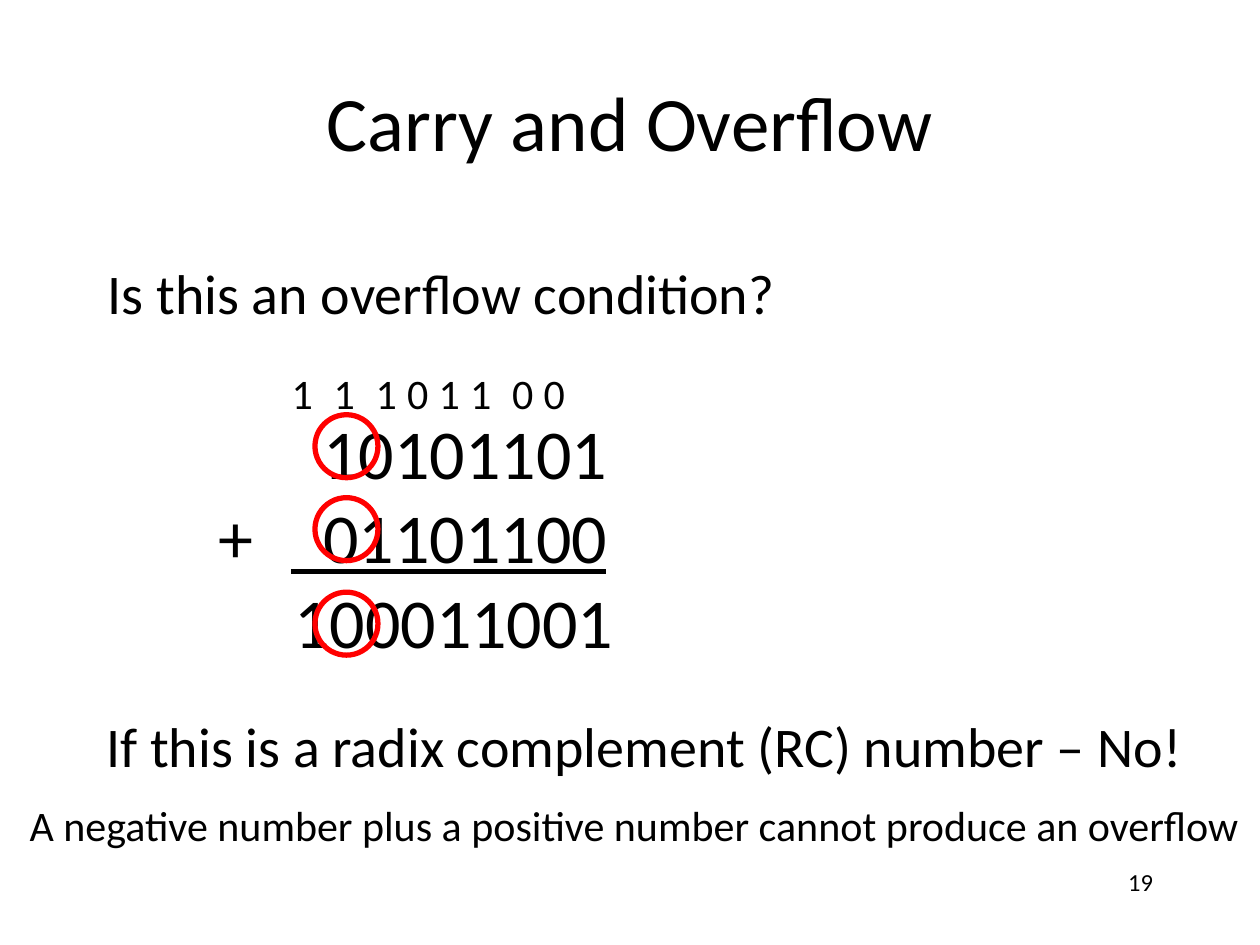
from pptx import Presentation
from pptx.dml.color import RGBColor
from pptx.enum.shapes import MSO_CONNECTOR, MSO_SHAPE
from pptx.enum.text import MSO_ANCHOR, PP_ALIGN
from pptx.oxml.ns import qn
from pptx.util import Inches, Pt
from lxml.etree import SubElement

BLACK = RGBColor(0, 0, 0)
RED = RGBColor(255, 0, 0)
FONT = "Calibri"
COLS, ROWS = 120, 90
LEFT, MID, RIGHT = PP_ALIGN.LEFT, PP_ALIGN.CENTER, PP_ALIGN.RIGHT


def cells(*counts):
    """Turn counts of grid cells, twelve to the inch, into lengths."""
    return [Inches(count / 12) for count in counts]


def add_text(slide, area, lines, size, align=LEFT, wrap=False,
             anchor=MSO_ANCHOR.TOP):
    """Add a text box with one paragraph for each line."""
    frame = slide.shapes.add_textbox(*cells(*area)).text_frame
    frame.word_wrap = wrap
    frame.vertical_anchor = anchor
    for row, line in enumerate(lines):
        para = frame.add_paragraph() if row else frame.paragraphs[0]
        para.alignment = align
        run = para.add_run()
        run.text = line
        run.font.name = FONT
        run.font.size = Pt(size)
        run.font.color.rgb = BLACK


def add_ring(slide, left, top, size):
    """Add a red ring around a sign bit."""
    ring = slide.shapes.add_shape(MSO_SHAPE.OVAL, *cells(left, top, size, size))
    ring.shadow.inherit = False
    ring.fill.background()
    ring.line.color.rgb = RED
    ring.line.width = Pt(3)


def add_rule(slide, left, right, top):
    """Add the black rule above the result of the sum."""
    rule = slide.shapes.add_connector(
        MSO_CONNECTOR.STRAIGHT, *cells(left, top, right, top))
    rule.line.color.rgb = BLACK
    rule.line.width = Pt(3)
    SubElement(rule._element.spPr, qn("a:effectLst"))


def add_sum(slide):
    """Add the binary sum with its carries and ringed sign bits."""
    add_text(slide, (26.6, 38.4, 32.4, 22.6), ["10101101", "01101100"], 40,
             RIGHT, wrap=True)
    add_text(slide, (19.6, 46.4, 5.8, 9.2), ["+"], 40)
    for bit, col in zip("11101100", (0, 4, 8, 11, 14, 17, 21, 24)):
        add_text(slide, (26.6 + col, 34.4, 4.4, 6.1), [bit], 24)
    add_rule(slide, 27.7, 57.7, 54.4)
    add_text(slide, (20.6, 54.5, 39, 9.2), ["100011001"], 40, RIGHT, wrap=True)
    for top in (39.5, 47.4, 56.4):
        add_ring(slide, 30, top, 6)


def main():
    """Build the slide and save it."""
    deck = Presentation()
    deck.slide_width, deck.slide_height = cells(COLS, ROWS)
    slide = deck.slides.add_slide(deck.slide_layouts[6])
    add_text(slide, (9, 4, 102, 15), ["Carry and Overflow"], 44, MID,
             wrap=True, anchor=MSO_ANCHOR.MIDDLE)
    add_text(slide, (9, 24, 66.1, 7.6),
             ["Is this an overflow condition?"], 32, MID)
    add_text(slide, (8, 67.2, 106.8, 7.6),
             ["If this is a radix complement (RC) number – No!"], 32, MID)
    add_sum(slide)
    add_text(slide, (1, 75.6, 118.8, 6),
             ["A negative number plus a positive number "
              "cannot produce an overflow"], 24, MID)
    add_text(slide, (86, 82, 25, 6), ["19"], 14, RIGHT, wrap=True)
    deck.save("out.pptx")


if __name__ == "__main__":
    main()
